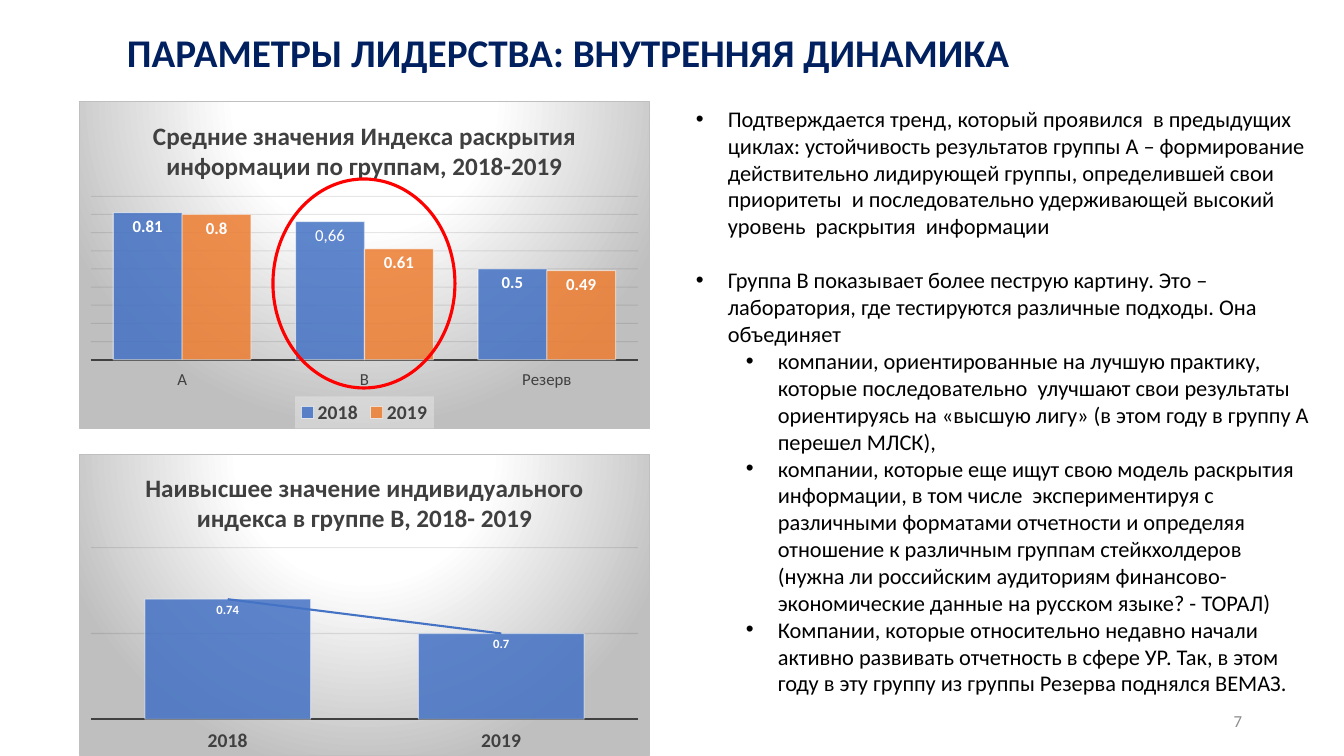
from dataclasses import dataclass

from lxml.etree import fromstring
from pptx import Presentation
from pptx.chart.data import CategoryChartData
from pptx.dml.color import RGBColor
from pptx.enum.chart import XL_CHART_TYPE as CT, XL_LABEL_POSITION as LP
from pptx.enum.chart import XL_LEGEND_POSITION as LEG, XL_TICK_LABEL_POSITION as TLP
from pptx.enum.chart import XL_TICK_MARK as TICK
from pptx.enum.shapes import MSO_SHAPE
from pptx.enum.text import MSO_ANCHOR as ANCHOR, PP_ALIGN as ALIGN
from pptx.oxml.ns import qn
from pptx.util import Emu, Pt


@dataclass(frozen=True)
class Theme:
    font: str = "Calibri"
    navy: str = "002060"
    black: str = "000000"
    white: str = "FFFFFF"
    grey: str = "8C8C8C"
    dark: str = "404040"
    grid: str = "0D0D0D"
    silver: str = "BFBFBF"
    pale: str = "F2F2F2"
    blue: str = "4472C4"
    orange: str = "ED7D31"
    red: str = "FF0000"
    title: int = 28
    chart_title: int = 18
    body: int = 16
    legend: int = 14
    small: int = 12
    tiny: int = 9


T = Theme()
NS = ('xmlns:a="http://schemas.openxmlformats.org/drawingml/2006/main" '
      'xmlns:c="http://schemas.openxmlformats.org/drawingml/2006/chart"')

POINTS = [
    (0, "Подтверждается тренд, который проявился  в предыдущих циклах: устойчивость "
        "результатов группы А – формирование действительно лидирующей группы, определившей "
        "свои приоритеты  и последовательно удерживающей высокий уровень  раскрытия  информации"),
    (0, "Группа В показывает более пеструю картину. Это – лаборатория, где тестируются "
        "различные подходы. Она объединяет"),
    (1, "компании, ориентированные на лучшую практику, которые последовательно  улучшают "
        "свои результаты ориентируясь на «высшую лигу» (в этом году в группу А перешел МЛСК),"),
    (1, "компании, которые еще ищут свою модель раскрытия информации, в том числе  "
        "экспериментируя с  различными форматами отчетности и определяя отношение к различным "
        "группам стейкхолдеров (нужна ли российским аудиториям финансово-экономические данные "
        "на русском языке? - ТОРАЛ)"),
    (1, "Компании, которые относительно недавно начали активно развивать отчетность в сфере "
        "УР. Так, в этом году в эту группу из группы Резерва поднялся ВЕМАЗ."),
]


def px(n):
    return Emu(round(n * 12192000 / 1344))


def rgb(color):
    return RGBColor.from_string(color)


def set_font(font, size, color, bold=False):
    font.name, font.size, font.bold = T.font, Pt(size), bold
    font.color.rgb = rgb(color)


def set_line(line, color, width):
    line.color.rgb, line.width = rgb(color), Pt(width)


def fade(elm, path, percent):
    for clr in elm.xpath(path + "//a:srgbClr"):
        clr.append(fromstring(f'<a:alpha {NS} val="{percent * 1000}"/>'))


def add_text(p, text, *, size, color=T.black, bold=False, align=None, spacing=None,
             after=0, bullet_at=None):
    r = p.add_run()
    r.text = text
    set_font(r.font, size, color, bold)
    p.alignment, p.line_spacing, p.space_after = align, spacing, Pt(after)
    if bullet_at is not None:
        pPr = p._p.get_or_add_pPr()
        pPr.set("marL", str(px(bullet_at + 32)))
        pPr.set("indent", str(-px(32)))
        pPr.append(fromstring(f'<a:buFont {NS} typeface="Arial"/>'))
        pPr.append(fromstring(f'<a:buChar {NS} char="•"/>'))


def add_box(s, x, y, w, h, anchor=ANCHOR.TOP):
    tf = s.shapes.add_textbox(px(x), px(y), px(w), px(h)).text_frame
    tf.word_wrap, tf.vertical_anchor = True, anchor
    return tf


def add_ring(s, x, y, w, h):
    sp = s.shapes.add_shape(MSO_SHAPE.OVAL, px(x), px(y), px(w), px(h))
    sp.shadow.inherit = False
    sp.fill.background()
    set_line(sp.line, T.red, 2.25)


def style_background(chart):
    stops = "".join(f'<a:gs pos="{pos * 1000}"><a:srgbClr val="{color}"/></a:gs>'
                    for pos, color in ((0, T.white), (39, T.white), (100, T.silver)))
    chart._chartSpace.find(qn("c:chart")).addnext(fromstring(
        f'<c:spPr {NS}><a:gradFill><a:gsLst>{stops}</a:gsLst><a:path path="circle">'
        '<a:fillToRect l="50000" t="-80000" r="50000" b="180000"/></a:path></a:gradFill>'
        f'<a:ln w="9525"><a:solidFill><a:srgbClr val="{T.silver}"/></a:solidFill></a:ln>'
        '</c:spPr>'))


def place_plot(chart, top, height):
    area = chart._chartSpace.chart.plotArea
    for old in area.findall(qn("c:layout")):
        area.remove(old)
    sizes = "".join(f'<c:{k} val="{v}"/>' for k, v in
                    (("x", 0.02), ("y", top), ("w", 0.96), ("h", height)))
    area.insert(0, fromstring(
        f'<c:layout {NS}><c:manualLayout><c:layoutTarget val="inner"/>'
        f'<c:xMode val="edge"/><c:yMode val="edge"/>{sizes}</c:manualLayout></c:layout>'))


def style_series(ser, color, label_size):
    ser.invert_if_negative = False
    ser.format.fill.solid()
    ser.format.fill.fore_color.rgb = rgb(color)
    set_line(ser.format.line, T.white, 0.75)
    fade(ser._element, "c:spPr/a:solidFill", 85)
    fade(ser._element, "c:spPr/a:ln", 50)
    labels = ser.data_labels
    labels.show_value, labels.position = True, LP.INSIDE_END
    set_font(labels.font, label_size, T.white, True)


def add_columns(s, x, y, w, h, *, title, cats, series, low, high, plot, label_size,
                cat_size, cat_bold=False):
    data = CategoryChartData()
    data.categories = cats
    for name, values in series:
        data.add_series(name, values)
    chart = s.shapes.add_chart(CT.COLUMN_CLUSTERED, px(x), px(y), px(w), px(h), data).chart
    chart.font.name, chart.font.size = T.font, Pt(10)
    chart.has_legend = False
    add_text(chart.chart_title.text_frame.paragraphs[0], title,
             size=T.chart_title, color=T.dark, bold=True)
    chart.chart_title.include_in_layout = False
    style_background(chart)
    place_plot(chart, *plot)

    # Axes
    cat, val = chart.category_axis, chart.value_axis
    cat.major_tick_mark = cat.minor_tick_mark = TICK.NONE
    cat.tick_label_position = TLP.LOW
    set_font(cat.tick_labels.font, cat_size, T.dark, cat_bold)
    set_line(cat.format.line, T.dark, 1.5)
    val.minimum_scale, val.maximum_scale, val.major_unit = low, high, 0.1
    val.has_major_gridlines, val.visible = True, False
    set_line(val.major_gridlines.format.line, T.grid, 0.75)
    fade(val._element, "c:majorGridlines", 10)

    # Columns
    bars = chart.plots[0]
    bars.gap_width, bars.overlap, bars.vary_by_categories = 65, 0, False
    for ser, color in zip(bars.series, (T.blue, T.orange)):
        style_series(ser, color, label_size)
    return chart


def add_legend(chart):
    chart.has_legend = True
    legend = chart.legend
    legend.position, legend.include_in_layout = LEG.BOTTOM, False
    set_font(legend.font, T.legend, T.dark, True)
    legend._element.find(qn("c:txPr")).addprevious(fromstring(
        f'<c:spPr {NS}><a:solidFill><a:srgbClr val="{T.pale}"><a:alpha val="39000"/>'
        '</a:srgbClr></a:solidFill></c:spPr>'))


def add_trend(ser):
    ser._element.find(qn("c:cat")).addprevious(fromstring(
        f'<c:trendline {NS}><c:spPr><a:ln w="19050"><a:solidFill><a:srgbClr val="{T.blue}"/>'
        '</a:solidFill></a:ln></c:spPr><c:trendlineType val="linear"/>'
        '<c:dispRSqr val="0"/><c:dispEq val="0"/></c:trendline>'))


def main():
    prs = Presentation()
    prs.slide_width, prs.slide_height = px(1344), px(756)
    s = prs.slides.add_slide(prs.slide_layouts[6])

    # Heading and page number
    add_text(add_box(s, 117, 9, 1159, 92, ANCHOR.MIDDLE).paragraphs[0],
             "ПАРАМЕТРЫ ЛИДЕРСТВА: ВНУТРЕННЯЯ ДИНАМИКА",
             size=T.title, color=T.navy, bold=True, spacing=0.9)
    add_text(add_box(s, 950, 701, 302, 40, ANCHOR.MIDDLE).paragraphs[0], "7",
             size=T.small, color=T.grey, align=ALIGN.RIGHT)

    # Group averages, with group B ringed
    groups = add_columns(
        s, 79, 101, 571, 328, cats=["А", "В", "Резерв"],
        title="Средние значения Индекса раскрытия информации по группам, 2018-2019",
        series=[("2018", (0.81, 0.76, 0.5)), ("2019", (0.8, 0.61, 0.49))],
        low=0, high=0.9, plot=(0.29, 0.5), label_size=T.small, cat_size=T.small)
    add_legend(groups)
    label = groups.plots[0].series[0].points[1].data_label
    add_text(label.text_frame.paragraphs[0], "0,66", size=T.small, color=T.white)
    label.position = LP.INSIDE_END
    add_ring(s, 273, 179, 182, 209)

    # Findings
    tf = add_box(s, 686, 100, 636, 607)
    for i, (level, text) in enumerate(POINTS):
        p = tf.add_paragraph() if i else tf.paragraphs[0]
        p.level = level
        add_text(p, text, size=T.body, bullet_at=50 * level, after=0 if i else 19.5)

    # Best result in group B
    best = add_columns(
        s, 79, 454, 571, 302, cats=["2018", "2019"],
        title="Наивысшее значение индивидуального индекса в группе В, 2018- 2019",
        series=[("Индекс", (0.74, 0.7))], low=0.6, high=0.8, plot=(0.31, 0.57),
        label_size=T.tiny, cat_size=T.legend, cat_bold=True)
    add_trend(best.plots[0].series[0])

    prs.save("out.pptx")


if __name__ == "__main__":
    main()
